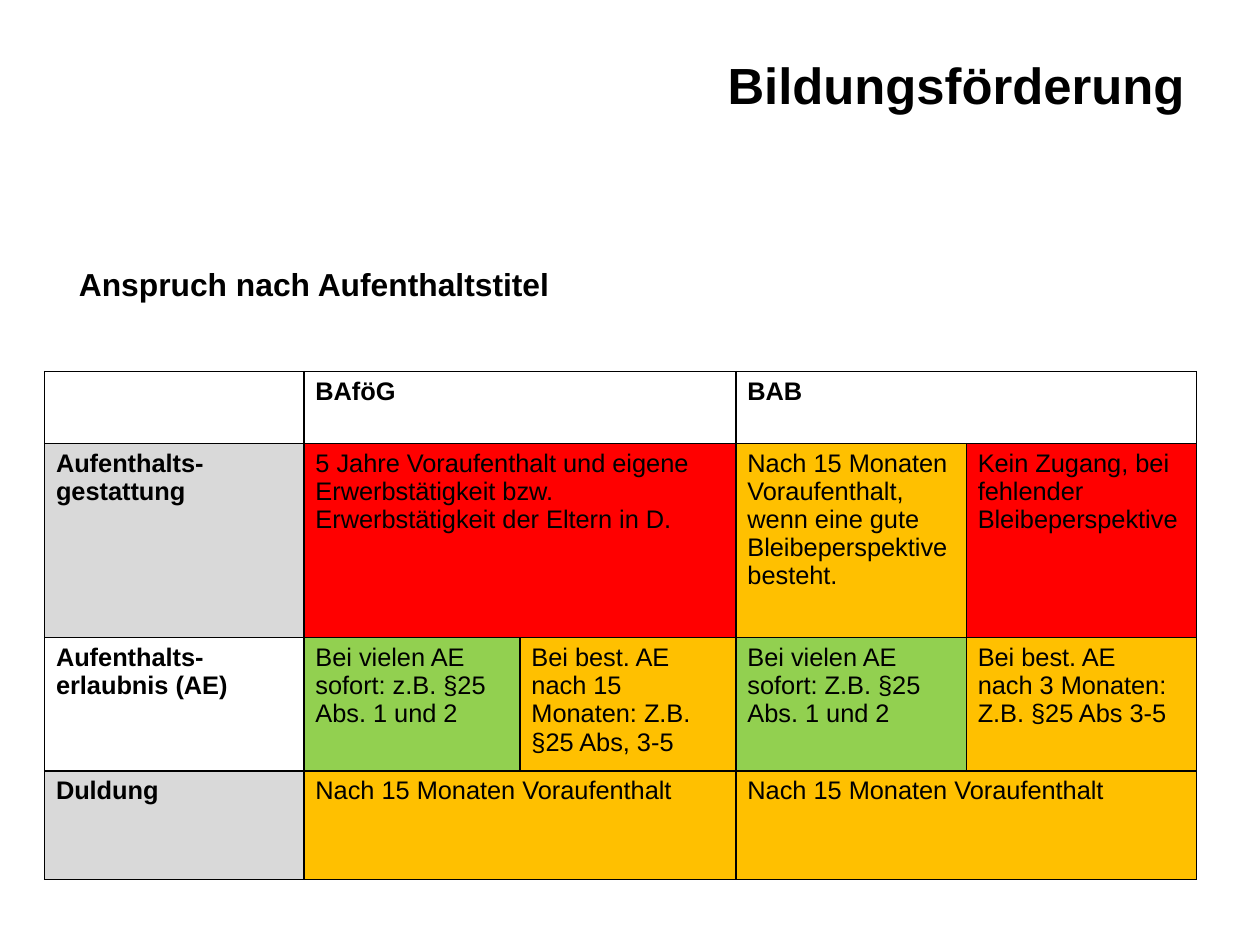
from lxml.etree import SubElement
from pptx import Presentation
from pptx.dml.color import RGBColor
from pptx.enum.text import MSO_ANCHOR, PP_ALIGN
from pptx.oxml.ns import qn
from pptx.util import Cm, Inches, Pt

SLIDE_WIDTH, SLIDE_HEIGHT = Cm(28), Cm(21)
BLACK, WHITE, GREY = "000000", "FFFFFF", "D9D9D9"
RED, AMBER, GREEN = "FF0000", "FFC000", "92D050"

COLUMN_WIDTHS = [2.27, 1.89, 1.89, 2.015, 2.015]
ROW_HEIGHTS = [0.63, 1.7, 1.16, 0.95]

# Each row lists (text, fill, columns spanned); a line break starts a paragraph
ENTITLEMENTS = [
    [("", WHITE, 1), ("BAföG", WHITE, 2), ("BAB", WHITE, 2)],
    [("Aufenthalts-gestattung", GREY, 1),
     ("5 Jahre Voraufenthalt und eigene Erwerbstätigkeit bzw. "
      "Erwerbstätigkeit der Eltern in D.", RED, 2),
     ("Nach 15 Monaten Voraufenthalt, wenn eine gute "
      "Bleibeperspektive besteht.", AMBER, 1),
     ("Kein Zugang, bei fehlender Bleibeperspektive", RED, 1)],
    [("Aufenthalts-erlaubnis (AE)", WHITE, 1),
     ("Bei vielen AE sofort: z.B. §25 Abs. 1 und 2", GREEN, 1),
     ("Bei best. AE\nnach 15 Monaten: Z.B. §25 Abs, 3-5", AMBER, 1),
     ("Bei vielen AE sofort: Z.B. §25 Abs. 1 und 2", GREEN, 1),
     ("Bei best. AE\nnach 3 Monaten: Z.B. §25 Abs 3-5", AMBER, 1)],
    [("Duldung", GREY, 1),
     ("Nach 15 Monaten Voraufenthalt", AMBER, 2),
     ("Nach 15 Monaten Voraufenthalt", AMBER, 2)],
]


def color(hex_value):
    return RGBColor.from_string(hex_value)


def write(text_frame, text, size, bold):
    text_frame.text = text
    for paragraph in text_frame.paragraphs:
        font = paragraph.font
        font.name, font.size, font.bold = "Arial", Pt(size), bold
        font.color.rgb = color(BLACK)


def add_title(slide, left, top, width, height):
    title = slide.shapes.title
    title.left, title.top = Inches(left), Inches(top)
    title.width, title.height = Inches(width), Inches(height)
    frame = title.text_frame
    frame.vertical_anchor = MSO_ANCHOR.TOP
    write(frame, "Bildungsförderung", 32, True)
    frame.paragraphs[0].alignment = PP_ALIGN.RIGHT
    frame.paragraphs[0].line_spacing = 0.9


def add_subheading(slide, left, top, width, height):
    box = slide.shapes.add_textbox(
        Inches(left), Inches(top), Inches(width), Inches(height))
    frame = box.text_frame
    frame.word_wrap = True
    frame.margin_left, frame.margin_right = Inches(0.14), Inches(0.11)
    frame.margin_top, frame.margin_bottom = Inches(0.5), Inches(0.06)
    write(frame, "Anspruch nach Aufenthaltstitel", 20, True)


def style_cell(cell, fill):
    properties = cell._tc.get_or_add_tcPr()
    for side in ("lnL", "lnR", "lnT", "lnB"):
        line = SubElement(properties, qn(f"a:{side}"), w=str(Pt(1)))
        line_fill = SubElement(line, qn("a:solidFill"))
        SubElement(line_fill, qn("a:srgbClr"), val=BLACK)
    cell.fill.solid()
    cell.fill.fore_color.rgb = color(fill)


def add_entitlement_table(slide, left, top):
    table = slide.shapes.add_table(
        len(ROW_HEIGHTS), len(COLUMN_WIDTHS), Inches(left), Inches(top),
        Inches(sum(COLUMN_WIDTHS)), Inches(sum(ROW_HEIGHTS))).table
    table.first_row = table.horz_banding = False
    for column, width in zip(table.columns, COLUMN_WIDTHS):
        column.width = Inches(width)
    for row, height in zip(table.rows, ROW_HEIGHTS):
        row.height = Inches(height)

    for row_index, entries in enumerate(ENTITLEMENTS):
        column_index = 0
        for text, fill, span in entries:
            end = column_index + span
            for covered in range(column_index, end):
                style_cell(table.cell(row_index, covered), fill)
            cell = table.cell(row_index, column_index)
            if span > 1:
                cell.merge(table.cell(row_index, end - 1))
            write(cell.text_frame, text, 16,
                  row_index == 0 or column_index == 0)
            column_index = end


def main():
    presentation = Presentation()
    presentation.slide_width = SLIDE_WIDTH
    presentation.slide_height = SLIDE_HEIGHT
    slide = presentation.slides.add_slide(presentation.slide_layouts[5])
    add_title(slide, 4.88, 0.48, 5.59, 0.74)
    add_subheading(slide, 0.55, 1.93, 9.92, 5.46)
    add_entitlement_table(slide, 0.39, 3.25)
    presentation.save("out.pptx")


if __name__ == "__main__":
    main()
